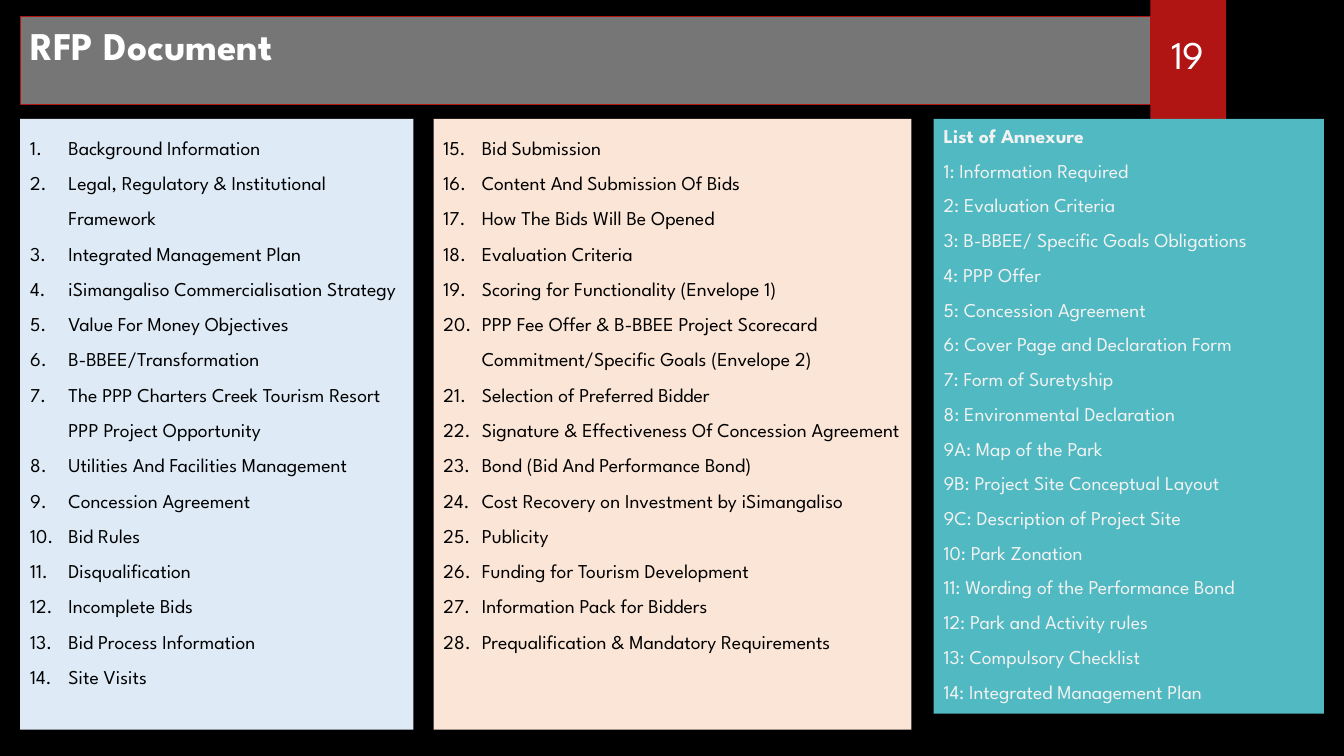
from dataclasses import dataclass

from lxml import etree
from pptx import Presentation, util as u
from pptx.dml.color import RGBColor
from pptx.enum import shapes, text
from pptx.oxml.ns import qn

FACE = "League Spartan"
WHITE = "FFFFFF"
RED = "B01513"
WIDE, HIGH = u.Inches(13.33), u.Inches(7.5)
EDGE = 1.5  # side margin and column gap, percent of the slide's width
TOP = 15.73  # top of the columns, percent of the slide's height


@dataclass
class Box:
    """A rectangle in percent of the slide's width and height."""
    left: float
    top: float
    width: float
    height: float


@dataclass
class Panel:
    box: Box
    fill: str
    ink: str
    lines: list[str]
    start: int = 0  # first list number; 0 for a plain list with a bold head


FIRST = [
    "Background Information",
    "Legal, Regulatory & Institutional Framework",
    "Integrated Management Plan",
    "iSimangaliso Commercialisation Strategy",
    "Value For Money Objectives",
    "B-BBEE/Transformation",
    "The PPP Charters Creek Tourism Resort PPP Project Opportunity",
    "Utilities And Facilities Management",
    "Concession Agreement",
    "Bid Rules",
    "Disqualification",
    "Incomplete Bids",
    "Bid Process Information",
    "Site Visits",
]
SECOND = [
    "Bid Submission",
    "Content And Submission Of Bids",
    "How The Bids Will Be Opened",
    "Evaluation Criteria",
    "Scoring for Functionality (Envelope 1)",
    "PPP Fee Offer & B-BBEE Project Scorecard Commitment/Specific Goals (Envelope 2)",
    "Selection of Preferred Bidder",
    "Signature & Effectiveness Of Concession Agreement",
    "Bond (Bid And Performance Bond)",
    "Cost Recovery on Investment by iSimangaliso",
    "Publicity",
    "Funding for Tourism Development",
    "Information Pack for Bidders",
    "Prequalification & Mandatory Requirements",
]
ANNEX = [
    "List of Annexure",
    "1: Information Required",
    "2: Evaluation Criteria",
    "3: B-BBEE/ Specific Goals Obligations",
    "4: PPP Offer",
    "5: Concession Agreement",
    "6: Cover Page and Declaration Form",
    "7: Form of Suretyship",
    "8: Environmental Declaration",
    "9A: Map of the Park",
    "9B: Project Site Conceptual Layout",
    "9C: Description of Project Site",
    "10: Park Zonation",
    "11: Wording of the Performance Bond",
    "12: Park and Activity rules",
    "13: Compulsory Checklist",
    "14: Integrated Management Plan",
]
PANELS = [
    Panel(Box(EDGE, TOP, 29.26, 80.8), "DEEBF7", "000000", FIRST, 1),
    Panel(Box(32.26, TOP, 35.56, 80.8), "FBE5D6", "000000", SECOND, 15),
    Panel(Box(69.47, TOP, 29.03, 78.67), "50B9C1", "F2F2F2", ANNEX),
]


def tint(code: str) -> RGBColor:
    return RGBColor.from_string(code)


def place(box: Box) -> list[int]:
    return [int(share * side / 100) for share, side in
            zip((box.left, box.top, box.width, box.height), (WIDE, HIGH) * 2)]


def block(slide, box: Box, fill: str, line: str = ""):
    shape = slide.shapes.add_shape(shapes.MSO_SHAPE.RECTANGLE, *place(box))
    shape.shadow.inherit = False
    shape.fill.solid()
    shape.fill.fore_color.rgb = tint(fill)
    if line:
        shape.line.color.rgb = tint(line)
        shape.line.width = u.Pt(0.75)
    else:
        shape.line.fill.background()
    shape.text_frame.word_wrap = True
    shape.text_frame.vertical_anchor = text.MSO_ANCHOR.TOP
    return shape


def style(para, size: int, ink: str, bold: bool = False) -> None:
    font = para.font
    font.name, font.size, font.bold = FACE, u.Pt(size), bold
    font.color.rgb = tint(ink)


def number(para, start: int) -> None:
    """Number the paragraph and hang its text."""
    props = para._p.get_or_add_pPr()
    props.set("marL", str(u.Inches(0.38)))
    props.set("indent", str(-u.Inches(0.38)))
    etree.SubElement(props, qn("a:buAutoNum"),
                     type="arabicPeriod", startAt=str(start))


def draw(slide, panel: Panel) -> None:
    frame = block(slide, panel.box, panel.fill).text_frame
    for i, line in enumerate(panel.lines):
        para = frame.add_paragraph() if i else frame.paragraphs[0]
        para.text = line
        if panel.start:
            number(para, panel.start)
            para.alignment = text.PP_ALIGN.LEFT
            para.line_spacing = 1.5
        else:
            para.alignment = text.PP_ALIGN.JUSTIFY
            para.space_after = u.Pt(8)
        style(para, 14, panel.ink, not panel.start and i == 0)


def main() -> None:
    deck = Presentation()
    deck.slide_width, deck.slide_height = WIDE, HIGH
    slide = deck.slides.add_slide(deck.slide_layouts[6])
    slide.background.fill.solid()
    slide.background.fill.fore_color.rgb = tint("000000")

    block(slide, Box(85.6, 0, 5.63, 16.67), RED)
    title = block(slide, Box(EDGE, 2.13, 84.1, 11.73), "767676", RED)
    head = title.text_frame.paragraphs[0]
    head.text = "RFP Document"
    head.alignment = text.PP_ALIGN.LEFT
    style(head, 28, WHITE, True)

    page = slide.shapes.add_textbox(*place(Box(84.92, 4.27, 6.9, 6.67)))
    page.text_frame.word_wrap = True
    page.text_frame.vertical_anchor = text.MSO_ANCHOR.BOTTOM
    count = page.text_frame.paragraphs[0]
    count.text = "19"
    count.alignment = text.PP_ALIGN.CENTER
    style(count, 28, WHITE)

    for panel in PANELS:
        draw(slide, panel)
    deck.save("out.pptx")


if __name__ == "__main__":
    main()
